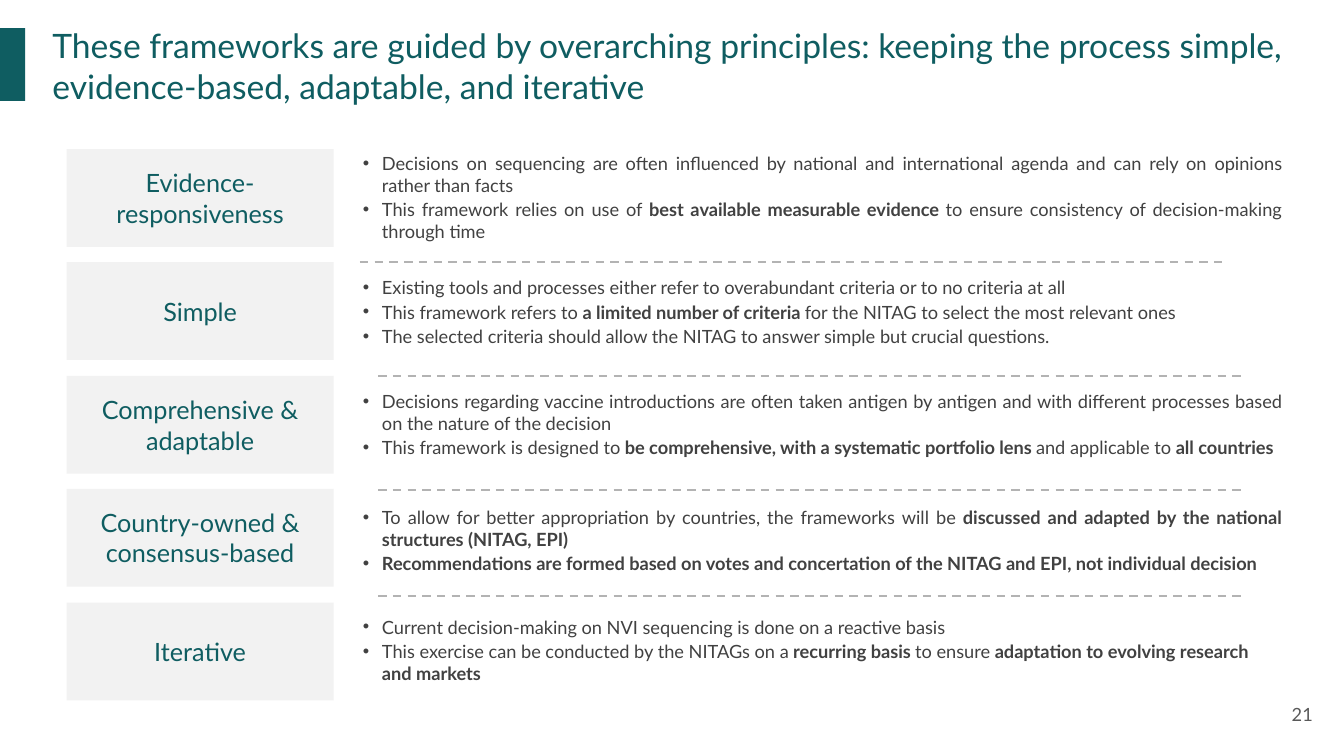
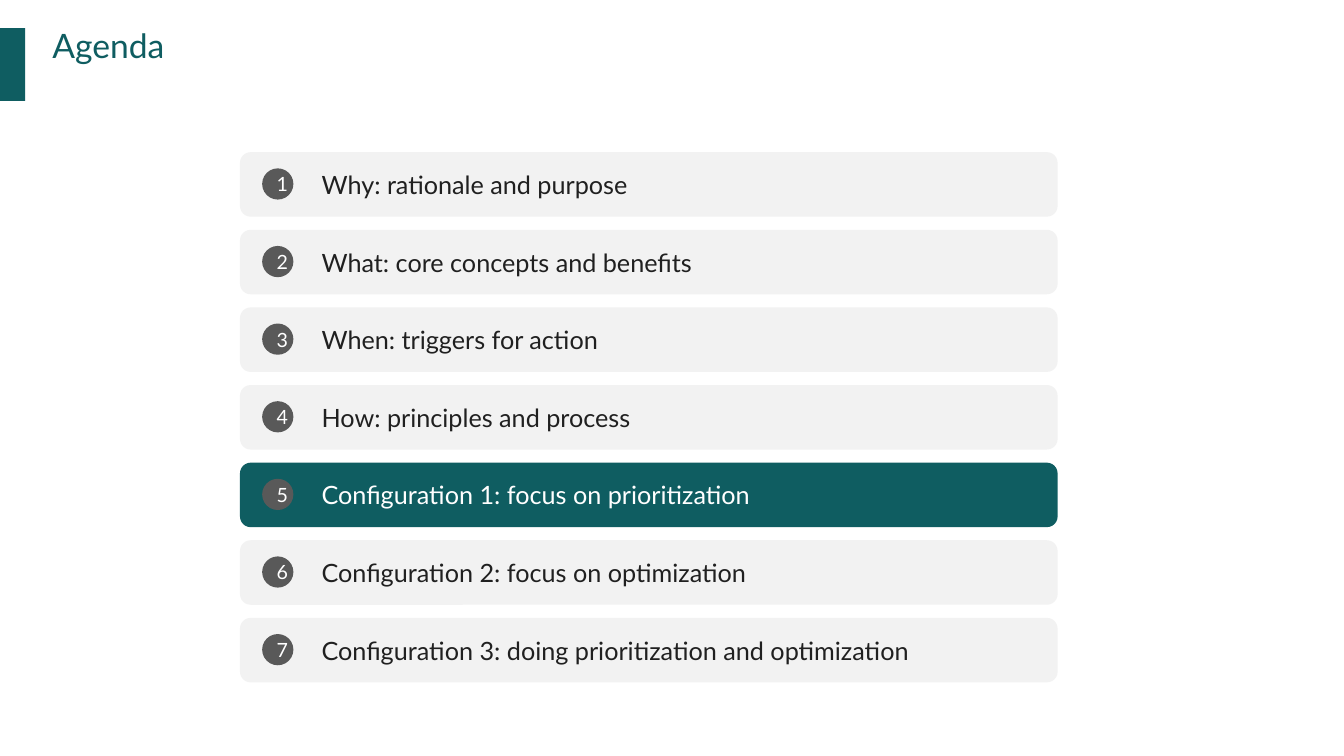
from dataclasses import dataclass

from lxml import etree
from pptx import Presentation
from pptx import util as u
from pptx.dml.color import RGBColor
from pptx.enum import dml, shapes, text
from pptx.oxml import ns

EMU_PER_PX = 9144  # 100 px to the inch


@dataclass(frozen=True)
class Theme:
    font: str = "Lato"
    teal: str = "0F5D61"
    panel: str = "F2F2F2"
    body: str = "414141"
    ink: str = "202020"
    grey: str = "595959"
    rule: str = "B3B3B3"
    white: str = "FFFFFF"
    title_pt: int = 24
    label_pt: int = 18
    badge_pt: int = 14
    body_pt: int = 13


@dataclass(frozen=True)
class Box:
    left: int
    top: int
    width: int
    height: int

    def emu(self) -> tuple[int, ...]:
        return tuple(px(n) for n in (self.left, self.top, self.width, self.height))


@dataclass(frozen=True)
class Principle:
    label: str
    body_top: int
    body_height: int
    bullets: tuple[str, ...]  # ** switches bold on and off
    align: text.PP_ALIGN = text.PP_ALIGN.JUSTIFY


@dataclass(frozen=True)
class Divider:
    left: int
    top: int


THEME = Theme()

PRINCIPLES = (
    Principle("Evidence-responsiveness", 146, 100, (
        "Decisions on sequencing are often influenced by national and international "
        "agenda and can rely on opinions rather than facts",
        "This framework relies on use of **best available measurable evidence **"
        "to ensure consistency of decision-making through time",
    )),
    Principle("Simple", 269, 81, (
        "Existing tools and processes either refer to overabundant criteria or to no criteria at all",
        "This framework refers to **a limited number of criteria **"
        "for the NITAG to select the most relevant ones",
        "The selected criteria should allow the NITAG to answer simple but crucial questions.",
    )),
    Principle("Comprehensive & adaptable", 382, 79, (
        "Decisions regarding vaccine introductions are often taken antigen by antigen "
        "and with different processes based on the nature of the decision",
        "This framework is designed to **be comprehensive, with a systematic portfolio lens **"
        "and applicable to **all countries**",
    )),
    Principle("Country-owned & consensus-based", 497, 79, (
        "To allow for better appropriation by countries, the frameworks will be "
        "**discussed and adapted by the national structures (NITAG, EPI)**",
        "**Recommendations are formed based on votes and concertation of the NITAG and EPI, "
        "not individual decision**",
    )),
    Principle("Iterative", 606, 79, (
        "Current decision-making on NVI sequencing is done on a reactive basis",
        "This exercise can be conducted by the NITAGs on a **recurring basis **to ensure "
        "**adaptation to evolving research and markets**",
    ), text.PP_ALIGN.LEFT),
)
DIVIDERS = (Divider(357, 260), Divider(375, 373), Divider(375, 486), Divider(375, 591))

AGENDA = (
    "Why: rationale and purpose",
    "What: core concepts and benefits",
    "When: triggers for action",
    "How: principles and process",
    "Configuration 1: focus on prioritization",
    "Configuration 2: focus on optimization",
    "Configuration 3: doing prioritization and optimization",
)
CURRENT_ITEM = 5


def px(n: int) -> int:
    return u.Emu(n * EMU_PER_PX)


# Shared drawing helpers
def format_runs(p, size: int, color: str) -> None:
    for r in p.runs:
        r.font.name = THEME.font
        r.font.size = u.Pt(size)
        r.font.color.rgb = RGBColor.from_string(color)


def set_margins(tf, margin: int) -> None:
    tf.margin_left = tf.margin_top = tf.margin_right = tf.margin_bottom = px(margin)


def add_panel(s, kind: shapes.MSO_SHAPE, box: Box, fill: str, words: str = "",
              size: int = THEME.label_pt, color: str = THEME.teal,
              align: text.PP_ALIGN = text.PP_ALIGN.CENTER, indent: int = 0) -> None:
    sp = s.shapes.add_shape(kind, *box.emu())
    sp.shadow.inherit = False
    sp.fill.solid()
    sp.fill.fore_color.rgb = RGBColor.from_string(fill)
    sp.line.fill.background()
    if not words:
        return
    tf = sp.text_frame
    tf.text = words
    tf.vertical_anchor = text.MSO_ANCHOR.MIDDLE
    p = tf.paragraphs[0]
    p.alignment = align
    if indent:
        p._p.get_or_add_pPr().set("marL", str(px(indent)))
    format_runs(p, size, color)


def add_titled_slide(prs, title: str):
    s = prs.slides.add_slide(prs.slide_layouts[5])
    add_panel(s, shapes.MSO_SHAPE.RECTANGLE, Box(0, 28, 25, 72), THEME.teal)
    sp = s.shapes.title
    sp.left, sp.top, sp.width, sp.height = Box(52, 25, 1255, 80).emu()
    tf = sp.text_frame
    tf.text = title
    tf.word_wrap = True
    tf.auto_size = text.MSO_AUTO_SIZE.NONE
    tf.vertical_anchor = text.MSO_ANCHOR.TOP
    set_margins(tf, 0)
    tf.paragraphs[0].alignment = text.PP_ALIGN.LEFT
    format_runs(tf.paragraphs[0], THEME.title_pt, THEME.teal)
    return s


def make_bullet(p, hang: int) -> None:
    pPr = p._p.get_or_add_pPr()
    pPr.set("marL", str(px(hang)))
    pPr.set("indent", str(-px(hang)))
    etree.SubElement(pPr, ns.qn("a:buFont")).set("typeface", "Arial")
    etree.SubElement(pPr, ns.qn("a:buChar")).set("char", "•")


def add_bullets(s, principle: Principle) -> None:
    box = Box(350, principle.body_top, 931, principle.body_height)
    tf = s.shapes.add_textbox(*box.emu()).text_frame
    tf.word_wrap = True
    tf.auto_size = text.MSO_AUTO_SIZE.SHAPE_TO_FIT_TEXT
    for i, bullet in enumerate(principle.bullets):
        p = tf.add_paragraph() if i else tf.paragraphs[0]
        make_bullet(p, 19)
        p.alignment = principle.align
        p.space_before = u.Pt(2 if i else 0)
        for part, words in enumerate(bullet.split("**")):
            if words:
                r = p.add_run()
                r.text = words
                r.font.bold = part % 2 == 1
        format_runs(p, THEME.body_pt, THEME.body)


def add_divider(s, divider: Divider) -> None:
    y = px(divider.top)
    line = s.shapes.add_connector(shapes.MSO_CONNECTOR.STRAIGHT,
                                  px(divider.left), y, px(divider.left + 860), y)
    line.line.color.rgb = RGBColor.from_string(THEME.rule)
    line.line.width = u.Pt(1.5)
    line.line.dash_style = dml.MSO_LINE.DASH
    etree.SubElement(line._element.spPr, ns.qn("a:effectLst"))


def add_page_number(s, number: int) -> None:
    tf = s.shapes.add_textbox(*Box(1235, 680, 80, 57).emu()).text_frame
    tf.text = str(number)
    tf.word_wrap = True
    tf.vertical_anchor = text.MSO_ANCHOR.MIDDLE
    set_margins(tf, 13)
    tf.paragraphs[0].alignment = text.PP_ALIGN.RIGHT
    format_runs(tf.paragraphs[0], THEME.body_pt, THEME.grey)


# Slides
def build_principles(prs) -> None:
    s = add_titled_slide(prs, "These frameworks are guided by overarching principles: keeping the "
                              "process simple, evidence-based, adaptable, and iterative")
    for i, principle in enumerate(PRINCIPLES):
        label_box = Box(66, 148 + i * 225 // 2, 265, 97)
        add_panel(s, shapes.MSO_SHAPE.RECTANGLE, label_box, THEME.panel, principle.label)
        add_bullets(s, principle)
    for divider in DIVIDERS:
        add_divider(s, divider)
    add_page_number(s, 21)


def build_agenda(prs) -> None:
    s = add_titled_slide(prs, "Agenda")
    for number, item in enumerate(AGENDA, start=1):
        top = 151 + 77 * (number - 1)
        current = number == CURRENT_ITEM
        add_panel(s, shapes.MSO_SHAPE.ROUNDED_RECTANGLE, Box(238, top, 811, 64),
                  THEME.teal if current else THEME.panel, item,
                  color=THEME.white if current else THEME.ink,
                  align=text.PP_ALIGN.LEFT, indent=68)
        add_panel(s, shapes.MSO_SHAPE.OVAL, Box(260, top + 16, 31, 31), THEME.grey,
                  str(number), THEME.badge_pt, THEME.white)


def main() -> None:
    prs = Presentation()
    prs.slide_width, prs.slide_height = px(1333), px(750)
    build_principles(prs)
    build_agenda(prs)
    prs.save("out.pptx")


if __name__ == "__main__":
    main()
